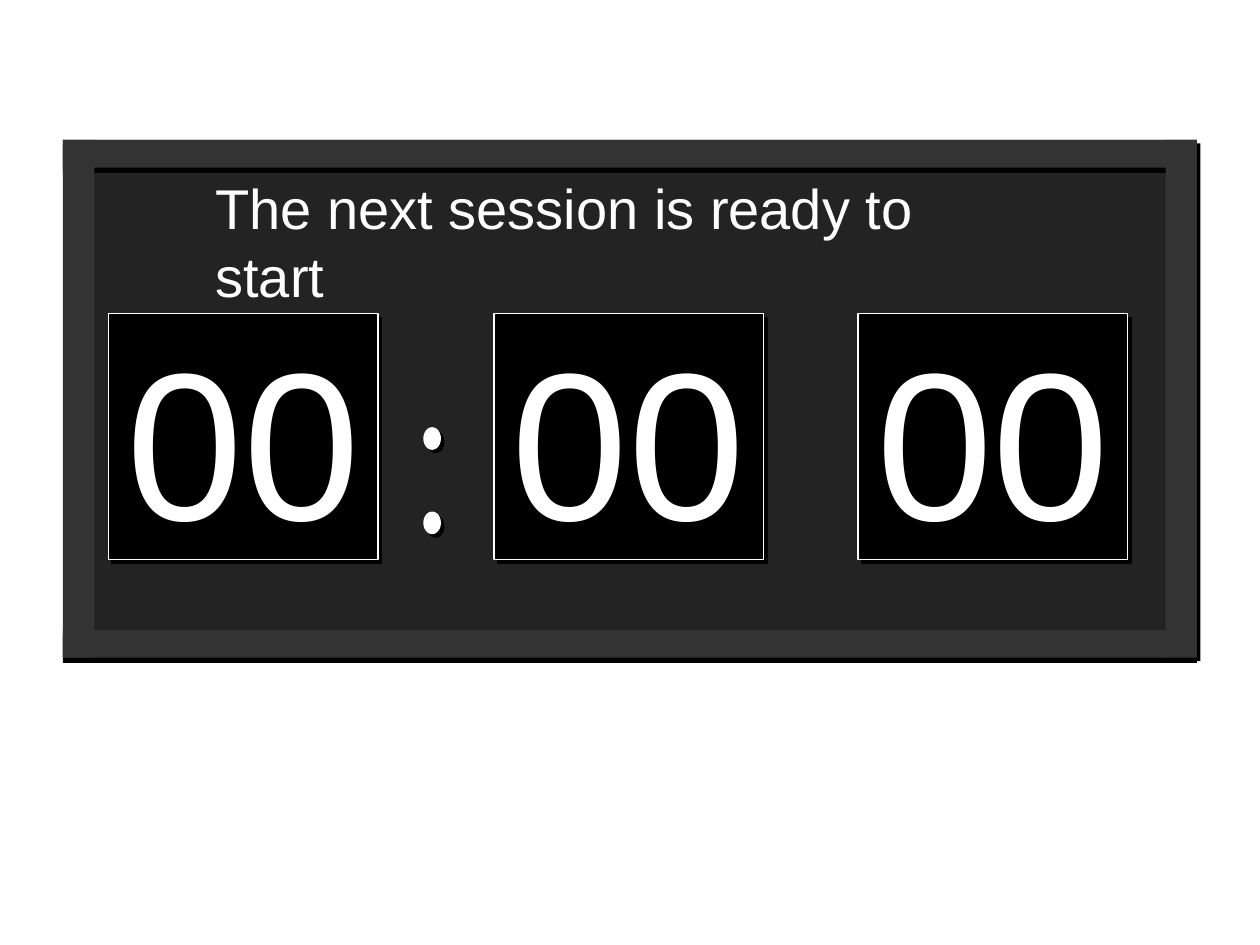
from lxml import etree
from pptx import Presentation
from pptx import util as u
from pptx.dml.color import RGBColor
from pptx.enum import shapes, text
from pptx.oxml import ns

BLACK, WHITE, FRAME, PANEL = "000000", "FFFFFF", "333333", "232323"
DIAGONAL, DOWN = (2.8, 45), (3, 90)  # shadow distance in points, angle in degrees

deck = Presentation()
deck.slide_width, deck.slide_height = u.Inches(10), u.Inches(7.5)
slide = deck.slides.add_slide(deck.slide_layouts[5])


def rgb(colour):
    return RGBColor.from_string(colour)


def add_part(preset, left, top, width, height, fill, shadow=None):
    """Add a borderless filled shape, measured in inches, with an optional hard shadow."""
    part = slide.shapes.add_shape(preset, *map(u.Inches, (left, top, width, height)))
    part.fill.solid()
    part.fill.fore_color.rgb = rgb(fill)
    part.line.fill.background()
    part.shadow.inherit = False
    if shadow:
        distance, angle = shadow
        effects = part._element.spPr.find(ns.qn("a:effectLst"))
        outer = etree.SubElement(effects, ns.qn("a:outerShdw"), blurRad="0",
                                 dist=str(u.Pt(distance)), dir=str(angle * 60000),
                                 algn="ctr", rotWithShape="0")
        etree.SubElement(outer, ns.qn("a:srgbClr"), val=BLACK)
    return part


# Clock case: a panel framed by four bars
left, top, width, height = 0.5, 1.11, 9, 4.11
side, rail = 0.25, 0.22
RECT, OVAL = shapes.MSO_SHAPE.RECTANGLE, shapes.MSO_SHAPE.OVAL
add_part(RECT, left, top, width, height, PANEL)
for rail_top in (top + height - rail, top):
    add_part(RECT, left, rail_top, width, rail, FRAME, DOWN)
add_part(RECT, left + width - side, top, side, height, FRAME, DIAGONAL)
add_part(RECT, left, top, side, height, FRAME)

# Hours, minutes and seconds
for digits_left in (0.86, 3.92, 6.81):
    digits = add_part(RECT, digits_left, 2.49, 2.14, 1.95, BLACK, DIAGONAL)
    digits.line.color.rgb = rgb(WHITE)
    digits.line.width = u.Pt(0.75)
    frame = digits.text_frame
    frame.word_wrap = False
    frame.vertical_anchor = text.MSO_ANCHOR.MIDDLE
    count = frame.paragraphs[0]
    count.text = "00"
    count.alignment = text.PP_ALIGN.CENTER
    count.font.name, count.font.size = "Arial", u.Pt(120)
    count.font.color.rgb = rgb(WHITE)

# Colon between hours and minutes
for dot_top in (3.39, 4.06):
    add_part(OVAL, 3.36, dot_top, 0.14, 0.18, WHITE, DIAGONAL)

# Message, brought in front of the case
message = slide.shapes.title
slide.shapes._spTree.append(message._element)
message.left, message.top = u.Inches(1.61), u.Inches(1.33)
message.width, message.height = u.Inches(6.65), u.Inches(0.84)
frame = message.text_frame
frame.word_wrap = True
frame.auto_size = text.MSO_AUTO_SIZE.NONE
frame.vertical_anchor = text.MSO_ANCHOR.TOP
line = frame.paragraphs[0]
line.text = "The next session is ready to start"
line.alignment = text.PP_ALIGN.LEFT
line.font.name, line.font.size = "Arial", u.Pt(32)
line.font.color.rgb = rgb(WHITE)

deck.save("out.pptx")
